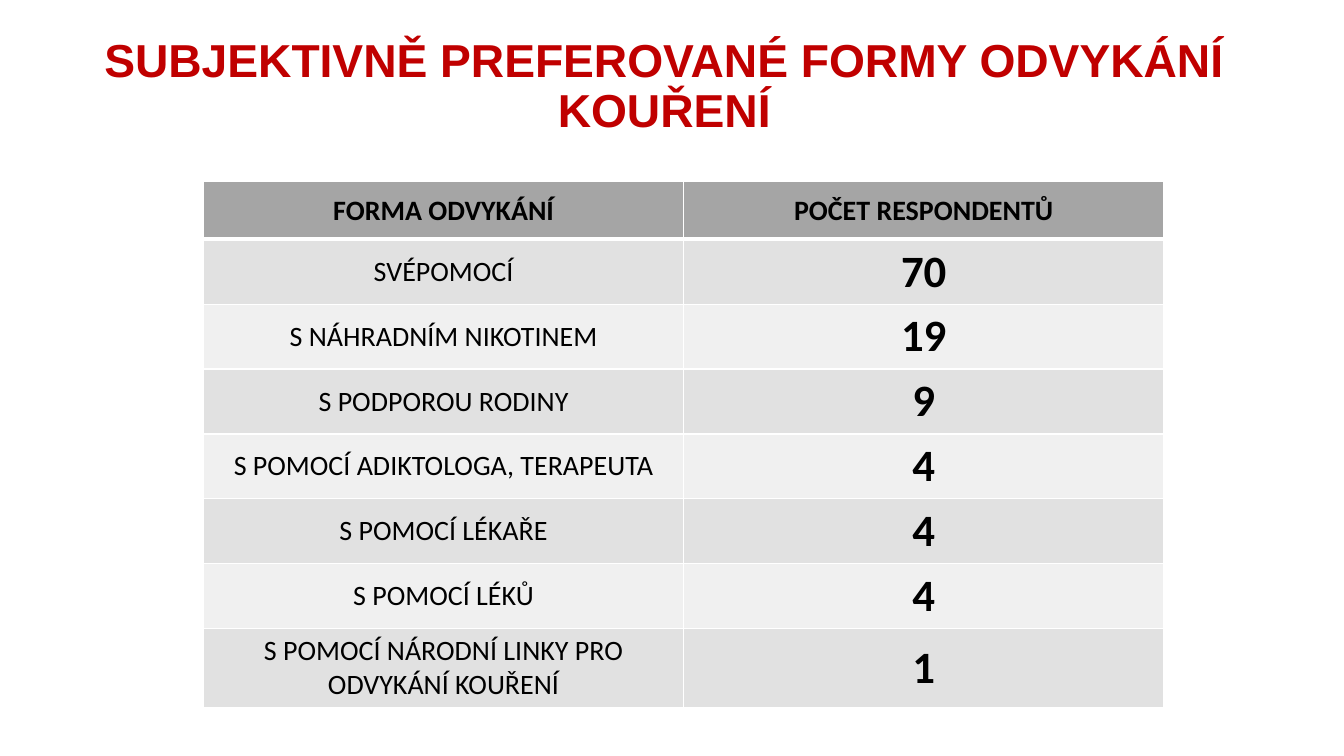
from lxml.etree import SubElement
from pptx import Presentation
from pptx.dml.color import RGBColor
from pptx.enum.text import MSO_ANCHOR as Anchor, PP_ALIGN as Align
from pptx.oxml.ns import qn
from pptx.util import Cm, Pt

RED = RGBColor(0xC0, 0x00, 0x00)
BLACK = RGBColor(0x00, 0x00, 0x00)
WHITE = RGBColor(0xFF, 0xFF, 0xFF)
HEADER_GRAY = RGBColor(0xA5, 0xA5, 0xA5)
BAND_GRAYS = (RGBColor(0xF0, 0xF0, 0xF0), RGBColor(0xE1, 0xE1, 0xE1))

TITLE = "SUBJEKTIVNĚ PREFEROVANÉ FORMY ODVYKÁNÍ KOUŘENÍ"
ROWS = (
    ("FORMA ODVYKÁNÍ", "POČET RESPONDENTŮ"),
    ("SVÉPOMOCÍ", "70"),
    ("S NÁHRADNÍM NIKOTINEM", "19"),
    ("S PODPOROU RODINY", "9"),
    ("S POMOCÍ ADIKTOLOGA, TERAPEUTA", "4"),
    ("S POMOCÍ LÉKAŘE", "4"),
    ("S POMOCÍ LÉKŮ", "4"),
    ("S POMOCÍ NÁRODNÍ LINKY PRO ODVYKÁNÍ KOUŘENÍ", "1"),
)
COLUMN_WIDTH = Cm(12.1)
ROW_HEIGHT = Cm(1.45)


def write_text(text_frame, text, *, size, font="Calibri", color=BLACK, bold=False, spacing=1.0):
    paragraph = text_frame.paragraphs[0]
    paragraph.alignment = Align.CENTER
    paragraph.line_spacing = spacing
    run = paragraph.add_run()
    run.text = text
    run.font.name = font
    run.font.size = Pt(size)
    run.font.bold = bold
    run.font.color.rgb = color


def add_title(slide, text):
    title = slide.shapes.title
    title.left, title.top, title.width, title.height = Cm(0), Cm(0.66), Cm(33.48), Cm(3.1)
    title.text_frame.word_wrap = True
    title.text_frame.vertical_anchor = Anchor.MIDDLE
    write_text(title.text_frame, text, size=33, font="Arial", color=RED, bold=True, spacing=0.9)


def set_borders(cell, **widths):
    """Draw white borders; widths in points are keyed by side: L, R, T, B."""
    properties = cell._tc.get_or_add_tcPr()
    for side, width in widths.items():
        line = SubElement(properties, qn(f"a:ln{side}"), w=str(Pt(width)))
        fill = SubElement(line, qn("a:solidFill"))
        SubElement(fill, qn("a:srgbClr"), val=str(WHITE))


def format_cell(cell, text, row, column):
    is_header = row == 0
    is_count = column == 1 and not is_header
    set_borders(cell, L=1, R=1, T=3 if row == 1 else 1, B=3 if is_header else 1)
    cell.fill.solid()
    cell.fill.fore_color.rgb = HEADER_GRAY if is_header else BAND_GRAYS[row % 2]
    cell.vertical_anchor = Anchor.MIDDLE
    write_text(cell.text_frame, text, size=32 if is_count else 20, bold=is_header or is_count)


def add_table(slide, rows):
    row_count, column_count = len(rows), len(rows[0])
    table = slide.shapes.add_table(
        row_count, column_count, Cm(5.13), Cm(4.58),
        COLUMN_WIDTH * column_count, ROW_HEIGHT * row_count,
    ).table
    for row, texts in enumerate(rows):
        for column, text in enumerate(texts):
            format_cell(table.cell(row, column), text, row, column)


def main():
    presentation = Presentation()
    presentation.slide_width, presentation.slide_height = Cm(33.87), Cm(19.05)
    slide = presentation.slides.add_slide(presentation.slide_layouts[5])
    add_title(slide, TITLE)
    add_table(slide, ROWS)
    presentation.save("out.pptx")


if __name__ == "__main__":
    main()
